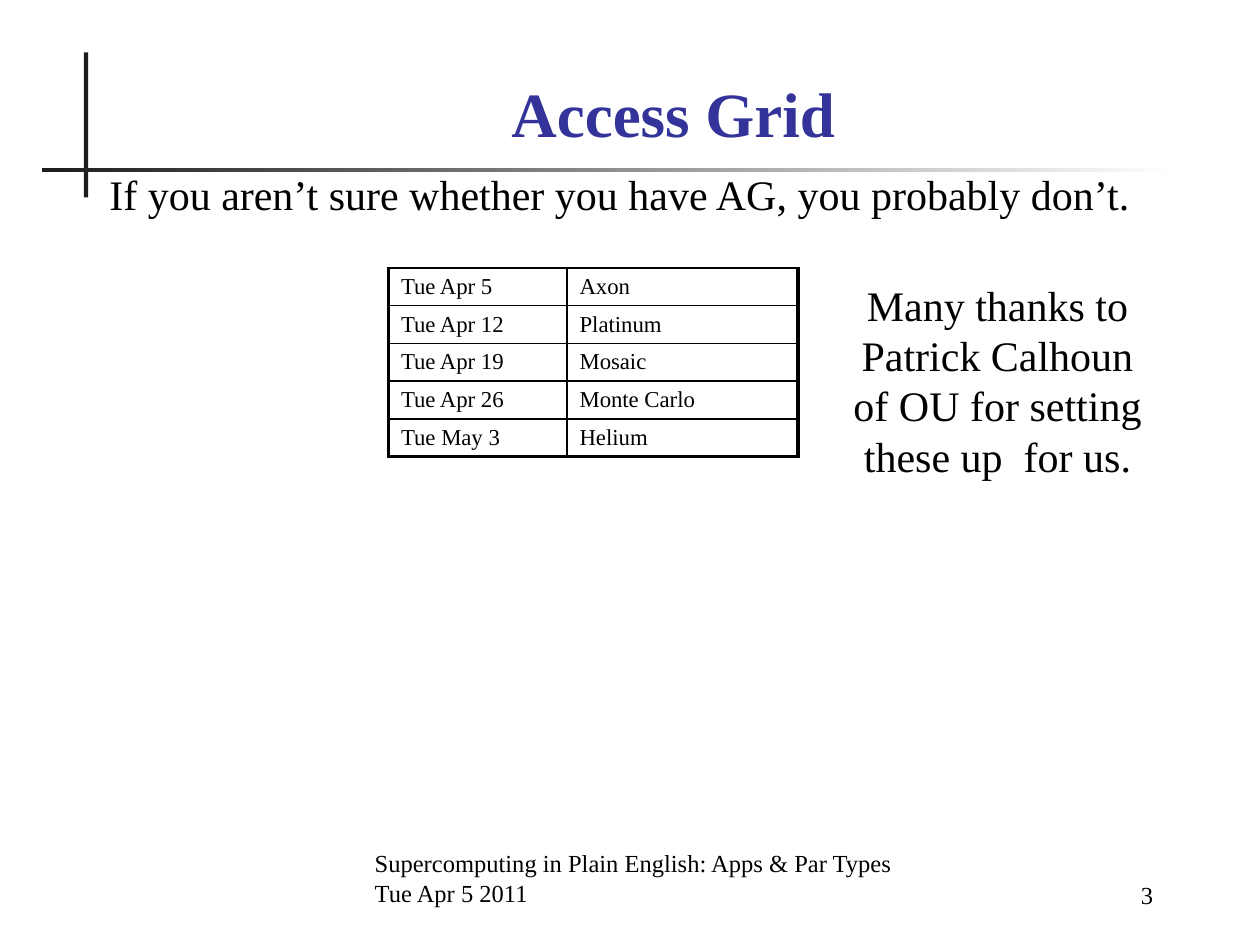
from lxml.etree import SubElement
from pptx import Presentation
from pptx.dml.color import RGBColor
from pptx.enum.shapes import MSO_SHAPE
from pptx.enum.text import MSO_ANCHOR as Anchor, PP_ALIGN as Align
from pptx.oxml.ns import qn
from pptx.util import Inches, Pt

INK = RGBColor(0x00, 0x00, 0x00)
CHARCOAL = RGBColor(0x1C, 0x1C, 0x1C)
WHITE = RGBColor(0xFF, 0xFF, 0xFF)
INDIGO = RGBColor(0x33, 0x33, 0x99)
FONT = "Times New Roman"

UNIT = Inches(1) / 12  # the slide is a grid of 120 columns by 90 rows
THIN, THICK = 1, 2.25

SCHEDULE = [
    ("Tue Apr 5", "Axon"),
    ("Tue Apr 12", "Platinum"),
    ("Tue Apr 19", "Mosaic"),
    ("Tue Apr 26", "Monte Carlo"),
    ("Tue May 3", "Helium"),
]


def grid(*counts):
    return [round(count * UNIT) for count in counts]


def write(frame, text, size, color=INK, align=Align.LEFT, bold=False):
    frame.text = text
    for paragraph in frame.paragraphs:
        paragraph.alignment = align
        font = paragraph.font
        font.name, font.size, font.bold = FONT, Pt(size), bold
        font.color.rgb = color


def add_text(slide, box, text, size, anchor=Anchor.TOP, **style):
    frame = slide.shapes.add_textbox(*grid(*box)).text_frame
    frame.word_wrap = True
    frame.vertical_anchor = anchor
    write(frame, text, size, **style)
    return frame


def add_rule(slide, box):
    rule = slide.shapes.add_shape(MSO_SHAPE.RECTANGLE, *grid(*box))
    rule.shadow.inherit = False
    rule.line.fill.background()
    rule.fill.solid()
    rule.fill.fore_color.rgb = CHARCOAL
    return rule


def add_crossed_rules(slide, left, top):
    """Upright rule and a fading level rule, which cross near the left end."""
    add_rule(slide, (left + 4, top, 0.4, 13.8))
    fading = add_rule(slide, (left, top + 11, 108, 0.4))
    fading.fill.gradient()
    fading.fill.gradient_angle = 0
    for stop, color in zip(fading.fill.gradient_stops, (CHARCOAL, WHITE)):
        stop.color.rgb = color


def set_borders(cell, **widths):
    """Draw the sides L, R, T, B, which must be given in that order."""
    properties = cell._tc.get_or_add_tcPr()
    for index, (side, width) in enumerate(widths.items()):
        line = SubElement(properties, qn(f"a:ln{side}"), w=str(Pt(width)))
        fill = SubElement(line, qn("a:solidFill"))
        SubElement(fill, qn("a:srgbClr"), val=str(INK))
        properties.insert(index, line)


def add_schedule(slide, left, top, column_widths, row_height):
    size = sum(column_widths), row_height * len(SCHEDULE)
    table = slide.shapes.add_table(
        len(SCHEDULE), len(column_widths), *grid(left, top, *size)).table
    table.first_row = table.horz_banding = False
    for column, width in zip(table.columns, grid(*column_widths)):
        column.width = width
    last_row, last_column = len(SCHEDULE) - 1, len(column_widths) - 1
    for r, entry in enumerate(SCHEDULE):
        for c, text in enumerate(entry):
            cell = table.cell(r, c)
            cell.margin_top = cell.margin_bottom = Inches(0.04)
            cell.vertical_anchor = Anchor.MIDDLE
            cell.fill.background()
            write(cell.text_frame, text, 13)
            set_borders(cell,
                        L=THICK if c == 0 else THIN,
                        R=THICK if c == last_column else THIN,
                        T=THIN,
                        B=THICK if r == last_row else THIN)


def add_footer(slide, left, top):
    add_text(slide, (left, top, 52.5, 6),
             "Supercomputing in Plain English: Apps & Par Types\nTue Apr 5 2011",
             14, Anchor.BOTTOM)
    add_text(slide, (left + 59.5, top + 0.25, 17, 6), "3", 14, Anchor.BOTTOM,
             align=Align.RIGHT)


def main():
    deck = Presentation()
    deck.slide_width, deck.slide_height = grid(120, 90)
    slide = deck.slides.add_slide(deck.slide_layouts[6])

    add_crossed_rules(slide, 4, 5)
    add_footer(slide, 34.5, 81)
    add_text(slide, (13, 6, 102.25, 8.9), "Access Grid", 36, Anchor.BOTTOM,
             color=INDIGO, align=Align.CENTER, bold=True)
    advice = add_text(
        slide, (8, 16, 102, 61),
        "If you aren’t sure whether you have AG, you probably don’t.",
        24, align=Align.CENTER)
    advice.paragraphs[0].line_spacing = 0.9
    add_schedule(slide, 37, 25.5, (17, 22), 3.6)
    add_text(slide, (79, 26, 32, 20.6),
             "Many thanks to Patrick Calhoun of OU for setting these up  for us.",
             24, align=Align.CENTER)

    deck.save("out.pptx")


if __name__ == "__main__":
    main()
